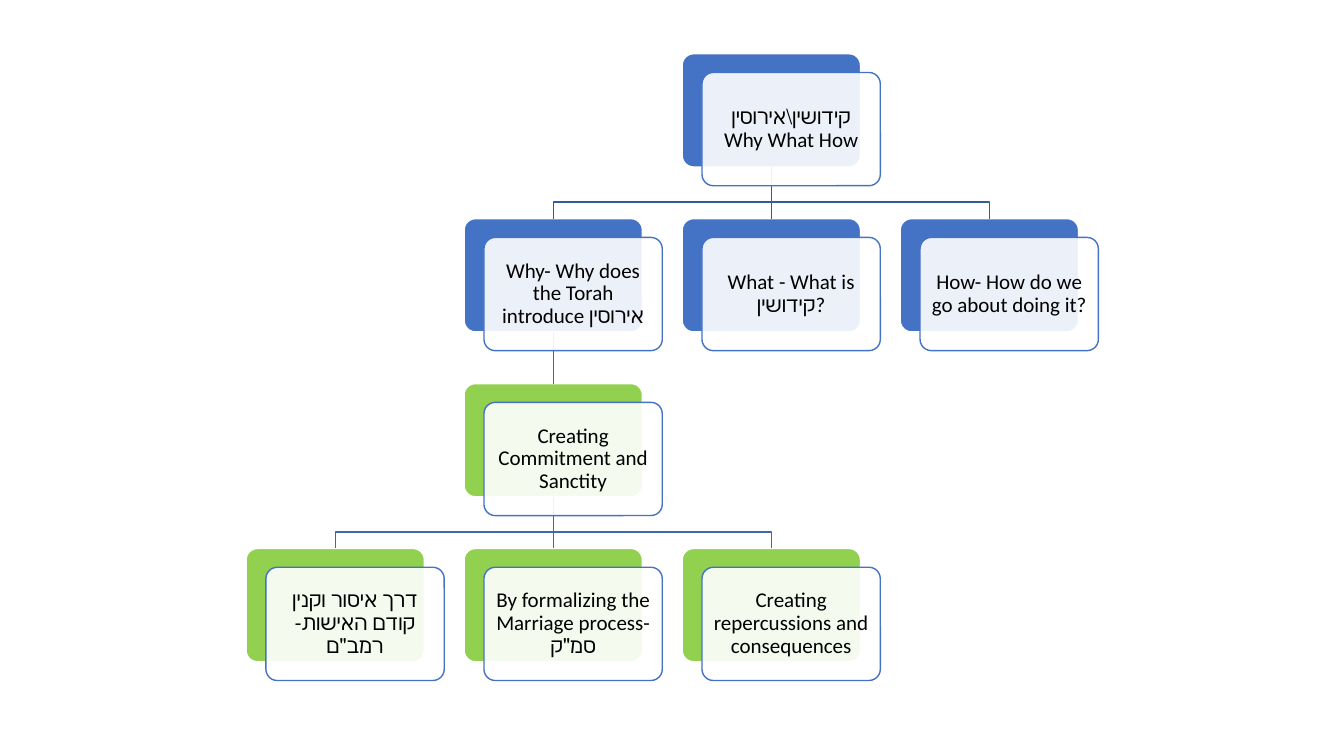
from lxml import etree
from pptx import Presentation
from pptx.dml.color import RGBColor
from pptx.enum.shapes import MSO_CONNECTOR, MSO_SHAPE
from pptx.enum.text import MSO_ANCHOR, PP_ALIGN
from pptx.oxml.ns import qn
from pptx.util import Pt

ROUND = MSO_SHAPE.ROUNDED_RECTANGLE
LINE = MSO_CONNECTOR.STRAIGHT
MIDDLE = MSO_ANCHOR.MIDDLE
CENTER = PP_ALIGN.CENTER
BOTTOM, TOP = 2, 0

BLUE, GREEN, WHITE, BLACK = "4472C4", "92D050", "FFFFFF", "000000"
DARK, MID = "365B9D", "3E67B2"

LEFT, HEAD = 175.8, 38.4
COL, ROW = 155.75, 117.8
WIDE, HIGH = 127.4, 80.9
SHIFT_X, SHIFT_Y = 14.15, 13.4
BEND = 25

# key: (column, row, fill, text)
NODES = {
    "root": (2, 0, BLUE, "קידושין\\אירוסין\vWhy What How"),
    "why": (1, 1, BLUE, "Why- Why does the Torah introduce אירוסין"),
    "what": (2, 1, BLUE, "What - What is קידושין?"),
    "how": (3, 1, BLUE, "How- How do we go about doing it?"),
    "bond": (1, 2, GREEN, "Creating Commitment and Sanctity"),
    "order": (0, 3, GREEN, "דרך איסור וקנין קודם האישות- רמב\"ם"),
    "form": (1, 3, GREEN, "By formalizing the Marriage process- סמ\"ק"),
    "result": (2, 3, GREEN, "Creating repercussions and consequences"),
}
# parent: (line colour, children)
TREE = {
    "root": (DARK, ("how", "what", "why")),
    "why": (MID, ("bond",)),
    "bond": (MID, ("result", "form", "order")),
}


def paint(color):
    return RGBColor.from_string(color)


def apply(item, values):
    for name, value in values.items():
        setattr(item, name, value)


class Chart:
    """Draws the parts of a tree of cards on one slide."""

    font = {"name": "Calibri", "size": Pt(15)}
    frame = {"word_wrap": True, "vertical_anchor": MIDDLE}
    frame.update({f"margin_{side}": Pt(4.1)
                  for side in ("left", "right", "top", "bottom")})
    para = {"alignment": CENTER, "line_spacing": 0.9}

    def __init__(self, slide):
        self.shapes = slide.shapes

    def stroke(self, item, color):
        item.line.color.rgb = paint(color)
        item.line.width = Pt(1)

    def box(self, x, y, fill, line):
        box = self.shapes.add_shape(ROUND, Pt(x), Pt(y), Pt(WIDE), Pt(HIGH))
        box.shadow.inherit = False
        box.adjustments[0] = 0.1
        box.fill.solid()
        box.fill.fore_color.rgb = paint(fill)
        self.stroke(box, line)
        return box

    def card(self, back, text):
        """Lay a translucent text card over a back box, shifted from it."""
        card = self.box(back.left.pt + SHIFT_X, back.top.pt + SHIFT_Y,
                        WHITE, BLUE)
        tint = card.fill._xPr.find(qn("a:solidFill"))[0]
        etree.SubElement(tint, qn("a:alpha")).set("val", "90000")
        apply(card.text_frame, self.frame)
        para = card.text_frame.paragraphs[0]
        para.text = text
        apply(para, self.para)
        for run in para.runs:
            apply(run.font, self.font)
            run.font.color.rgb = paint(BLACK)

    def drop(self, top, low, color):
        """Join a box to the one straight below it."""
        line = self.shapes.add_connector(LINE, 0, 0, 0, 0)
        line.begin_connect(top, BOTTOM)
        line.end_connect(low, TOP)
        self.stroke(line, color)
        etree.SubElement(line._element.spPr, qn("a:effectLst"))

    def elbow(self, top, low, color):
        """Join a box to one below it and to the side."""
        x, end = (box.left + box.width // 2 for box in (top, low))
        y = top.top + top.height
        turn = y + Pt(BEND)
        path = self.shapes.build_freeform(x, y)
        path.add_line_segments([(x, turn), (end, turn), (end, low.top)],
                               close=False)
        line = path.convert_to_shape()
        line.shadow.inherit = False
        line.fill.background()
        self.stroke(line, color)


def main():
    deck = Presentation()
    apply(deck, {"slide_width": Pt(960), "slide_height": Pt(540)})
    chart = Chart(deck.slides.add_slide(deck.slide_layouts[6]))

    backs = {key: chart.box(LEFT + col * COL, HEAD + row * ROW, fill, WHITE)
             for key, (col, row, fill, _) in NODES.items()}
    for top, (color, kids) in TREE.items():
        for kid in kids:
            same = NODES[top][0] == NODES[kid][0]
            join = chart.drop if same else chart.elbow
            join(backs[top], backs[kid], color)
    for key, (*_, text) in NODES.items():
        chart.card(backs[key], text)

    deck.save("out.pptx")


if __name__ == "__main__":
    main()
